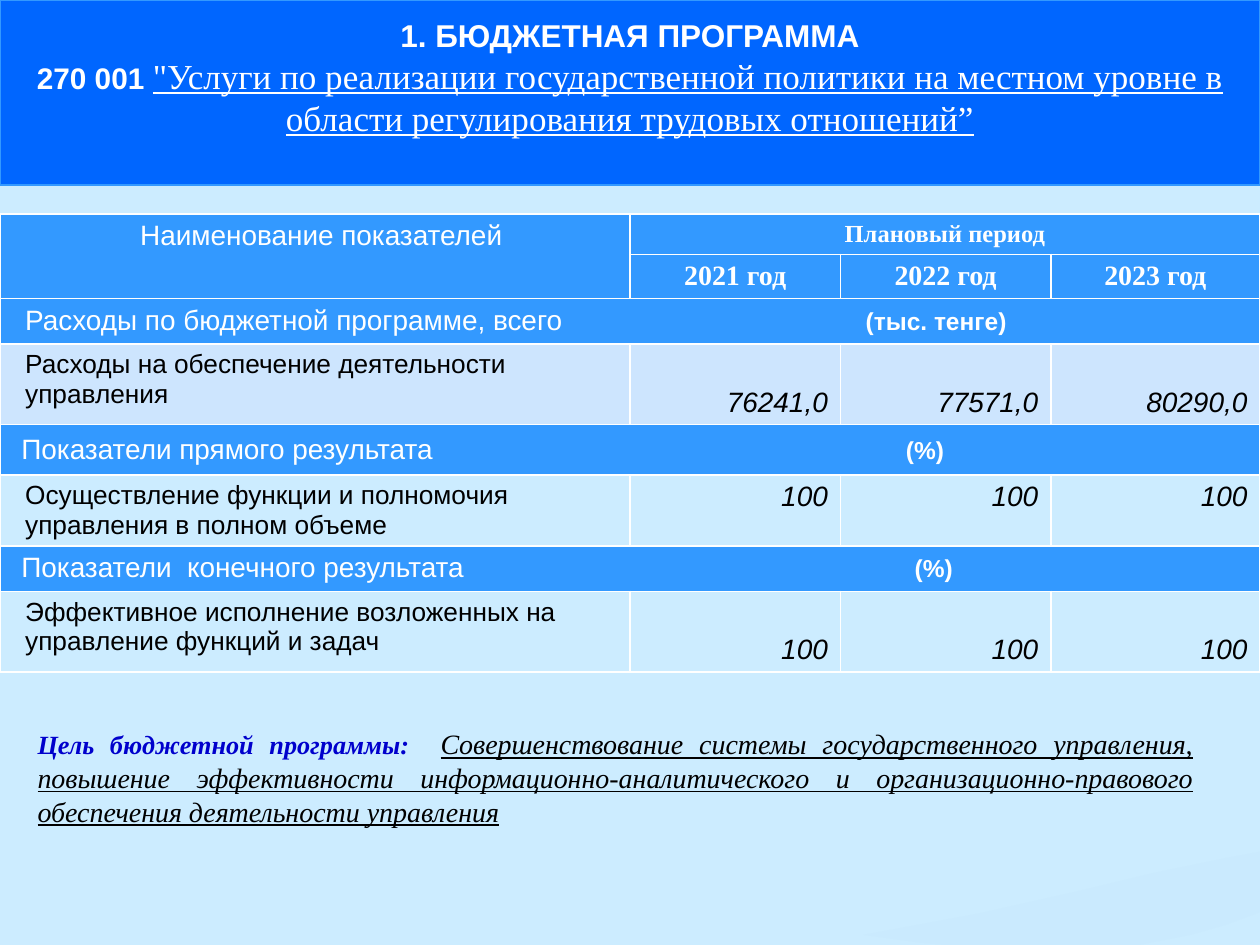
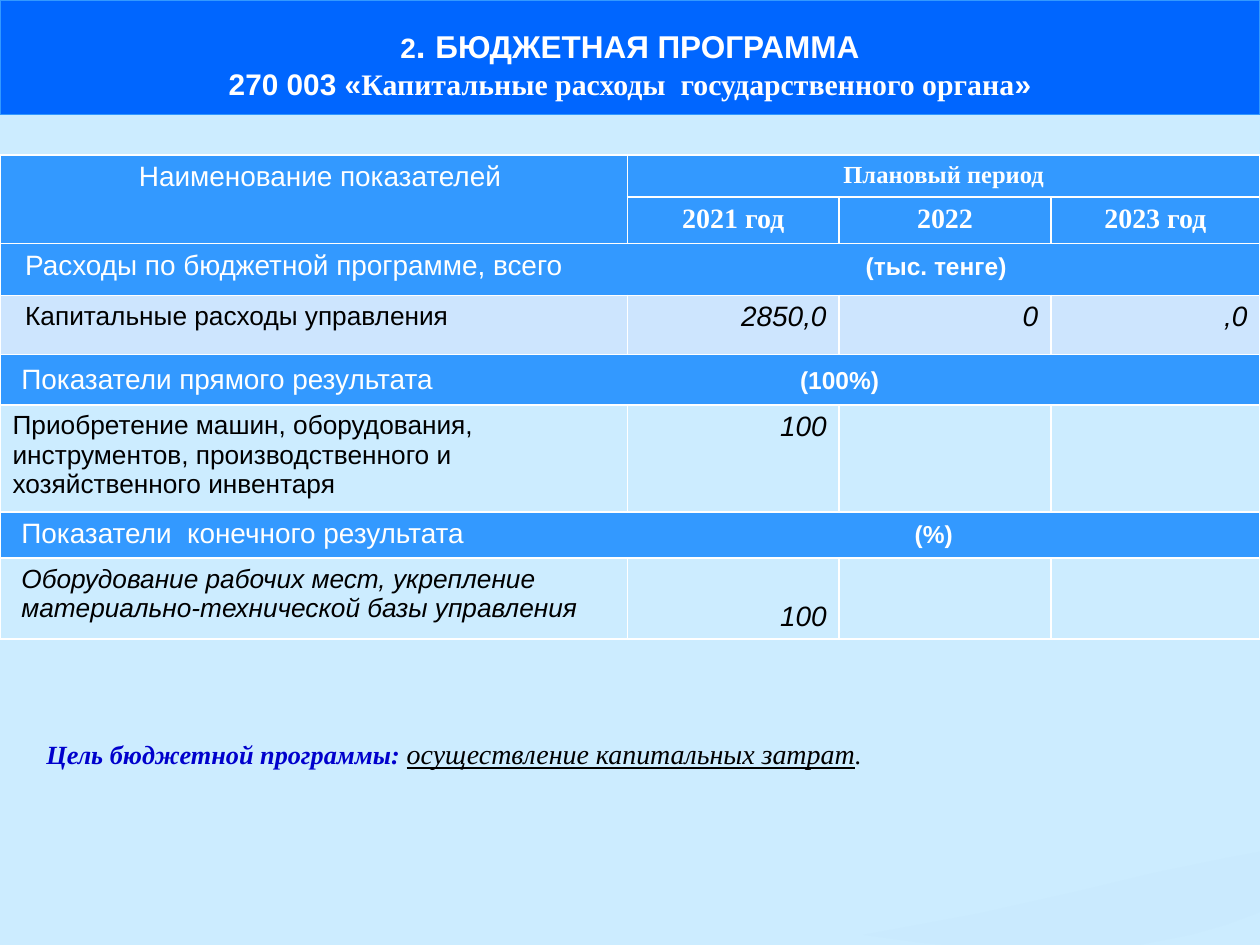
from pptx import Presentation
from pptx.util import Inches, Pt
from pptx.dml.color import RGBColor
from pptx.enum.shapes import MSO_SHAPE as Preset
from pptx.enum.text import MSO_ANCHOR as Anchor, PP_ALIGN as Align
from pptx.oxml.ns import qn
from lxml.etree import SubElement

COLORS = {"page": "CCECFF", "title": "0066FF", "band": "3399FF", "spending": "CDE5FE",
          "white": "FFFFFF", "black": "000000", "goal": "0000CC", "wave": "C6E7FC"}
SANS, SERIF = "Arial", "Times New Roman"
WAVE = [(10, 6.76), (9.73, 6.81), (9.15, 6.93), (8.57, 7.07), (7.77, 7.25), (7.07, 7.38),
        (6.85, 7.42), (7.29, 7.48), (7.5, 7.5), (9.04, 7.5), (9.45, 7.42), (9.73, 7.34),
        (10, 7.24)]


def rgb(name):
    return RGBColor.from_string(COLORS[name])


class BudgetDeck:
    """Holds the shared style and the slide being built."""

    def __init__(self):
        self.prs = Presentation()
        self.prs.slide_width, self.prs.slide_height = Inches(10), Inches(7.5)
        self.slide = None

    def new_slide(self):
        self.slide = self.prs.slides.add_slide(self.prs.slide_layouts[6])
        page = self.slide.background.fill
        page.solid()
        page.fore_color.rgb = rgb("page")

    def add_runs(self, paragraph, runs, align=Align.LEFT):
        """Each run is (text, size, font, colour, styles), styles being letters of 'biu'."""
        paragraph.alignment = align
        for text, size, font, color, styles in runs:
            run = paragraph.add_run()
            run.text = text
            run.font.size, run.font.name = Pt(size), font
            run.font.color.rgb = rgb(color)
            run.font.bold = "b" in styles
            run.font.italic = "i" in styles
            run.font.underline = "u" in styles

    def wave(self):
        points = [(Inches(x), Inches(y)) for x, y in WAVE]
        builder = self.slide.shapes.build_freeform(*points[0], scale=1.0)
        builder.add_line_segments(points[1:], close=True)
        wave = builder.convert_to_shape()
        wave.shadow.inherit = False
        wave.line.fill.background()
        wave.fill.solid()
        wave.fill.fore_color.rgb = rgb("wave")
        tint = wave._element.spPr.find(qn("a:solidFill"))[0]
        SubElement(tint, qn("a:alpha"), val="30000")

    def title(self, height, top_margin, lines):
        banner = self.slide.shapes.add_shape(Preset.RECTANGLE, 0, 0, Inches(10), Inches(height))
        banner.shadow.inherit = False
        banner.fill.solid()
        banner.fill.fore_color.rgb = rgb("title")
        banner.line.color.rgb = rgb("band")
        banner.line.width = Pt(0.75)
        frame = banner.text_frame
        frame.word_wrap = True
        frame.vertical_anchor = Anchor.TOP
        frame.margin_top = Inches(top_margin)
        for i, line in enumerate(lines):
            paragraph = frame.add_paragraph() if i else frame.paragraphs[0]
            runs = [(text, size, font, "white", styles) for text, size, font, styles in line]
            self.add_runs(paragraph, runs, Align.CENTER)

    def goal(self, left, top, height, runs):
        box = self.slide.shapes.add_textbox(Inches(left), Inches(top), Inches(9.37), Inches(height))
        box.text_frame.word_wrap = True
        self.add_runs(box.text_frame.paragraphs[0], runs, Align.JUSTIFY)

    def cell(self, cell, runs, fill=None, align=Align.LEFT, left=0.1, anchor=Anchor.TOP):
        if fill:
            cell.fill.solid()
            cell.fill.fore_color.rgb = rgb(fill)
        else:
            cell.fill.background()
        cell.margin_left = Inches(left)
        cell.vertical_anchor = anchor
        self.add_runs(cell.text_frame.paragraphs[0], runs, align)

    def borders(self, cell):
        props = cell._tc.get_or_add_tcPr()
        for side in ("a:lnL", "a:lnR", "a:lnT", "a:lnB"):
            edge = SubElement(props, qn(side), w=str(Pt(1)))
            SubElement(SubElement(edge, qn("a:solidFill")), qn("a:srgbClr"), val=COLORS["white"])

    def band(self, table, row, label, unit, unit_x, left, anchor):
        """Full-width section row; a tab stop places the unit."""
        head = table.cell(row, 0)
        head.merge(table.cell(row, 3))
        self.cell(head, [(label + "\t", 16, SANS, "white", ""), (unit, 14, SANS, "white", "b")],
                  "band", left=left, anchor=anchor)
        props = head.text_frame.paragraphs[0]._p.get_or_add_pPr()
        SubElement(SubElement(props, qn("a:tabLst")), qn("a:tab"),
                   pos=str(Inches(unit_x - left)), algn="l")

    def indicators(self, top, columns, heights, years, sections):
        frame = self.slide.shapes.add_table(len(heights), len(columns), 0, Inches(top),
                                            Inches(10), Inches(sum(heights)))
        table = frame.table
        table.first_row = table.horz_banding = False
        for column, width in zip(table.columns, columns):
            column.width = Inches(width)
        for row, height in zip(table.rows, heights):
            row.height = Inches(height)
        for cell in table.iter_cells():
            self.borders(cell)

        # Two-level header
        name, period = table.cell(0, 0), table.cell(0, 1)
        name.merge(table.cell(1, 0))
        period.merge(table.cell(0, 3))
        self.cell(name, [("Наименование показателей", 16, SANS, "white", "")],
                  "band", Align.CENTER, left=0.2)
        self.cell(period, [("Плановый период", 14, SERIF, "white", "b")], "band", Align.CENTER)
        for col, year in enumerate(years, 1):
            self.cell(table.cell(1, col), [(year, 16, SERIF, "white", "b")], "band", Align.CENTER)

        # A band and an indicator row per section
        bands = [("Расходы по бюджетной программе, всего", 0.2, Anchor.TOP, "spending"),
                 ("Показатели прямого результата", 0.17, Anchor.MIDDLE, None),
                 ("Показатели  конечного результата", 0.17, Anchor.TOP, None)]
        for i, ((label, band_left, band_anchor, fill), section) in enumerate(zip(bands, sections)):
            unit, unit_x, indicator, left, styles, values, anchor = section
            row = 2 + 2 * i
            self.band(table, row, label, unit, unit_x, band_left, band_anchor)
            self.cell(table.cell(row + 1, 0), [(indicator, 15, SANS, "black", styles)],
                      fill, left=left)
            for col, value in enumerate(values, 1):
                runs = [(value, 16, SANS, "black", "i")] if value else []
                self.cell(table.cell(row + 1, col), runs, fill, Align.RIGHT, anchor=anchor)


def main():
    deck = BudgetDeck()

    # Programme 001: labour relations
    deck.new_slide()
    deck.indicators(
        1.7, [5, 1.67, 1.67, 1.66], [0.32, 0.35, 0.36, 0.64, 0.4, 0.56, 0.36, 0.64],
        ["2021 год", "2022 год", "2023 год"],
        [("(тыс. тенге)", 6.87, "Расходы на обеспечение деятельности управления", 0.2, "",
          ["76241,0", "77571,0", "80290,0"], Anchor.BOTTOM),
         ("(%)", 7.19, "Осуществление функции и полномочия управления в полном объеме", 0.2, "",
          ["100"] * 3, Anchor.TOP),
         ("(%)", 7.26, "Эффективное исполнение возложенных на управление функций и задач", 0.2,
          "", ["100"] * 3, Anchor.BOTTOM)])
    deck.wave()
    deck.title(1.47, 0.13, [
        [("1. БЮДЖЕТНАЯ ПРОГРАММА", 18, SANS, "b")],
        [("270 001 ", 17, SANS, "b"),
         ("\"Услуги по реализации государственной политики на местном уровне в области "
          "регулирования трудовых отношений”", 20, SERIF, "u")]])
    deck.goal(0.2, 5.72, 0.91, [
        ("Цель бюджетной программы:  ", 15, SERIF, "goal", "bi"),
        ("Совершенствование системы государственного управления, повышение эффективности "
         "информационно-аналитического и организационно-правового обеспечения деятельности "
         "управления", 16, SERIF, "black", "iu")])

    # Programme 003: capital spending
    deck.new_slide()
    deck.indicators(
        1.23, [4.98, 1.68, 1.68, 1.66], [0.33, 0.37, 0.41, 0.47, 0.4, 0.85, 0.36, 0.64],
        ["2021 год", "2022", "2023 год"],
        [("(тыс. тенге)", 6.87, "Капитальные расходы управления", 0.2, "",
          ["2850,0", "0", ",0"], Anchor.TOP),
         ("(100%)", 6.35, "Приобретение машин, оборудования, инструментов, производственного и "
          "хозяйственного инвентаря", 0.1, "", ["100", "", ""], Anchor.TOP),
         ("(%)", 7.26, "Оборудование рабочих мест, укрепление материально-технической базы "
          "управления", 0.17, "i", ["100", "", ""], Anchor.BOTTOM)])
    deck.wave()
    deck.title(0.91, 0.19, [
        [("2", 16, SANS, "b"), (". ", 20, SANS, "b"), ("БЮДЖЕТНАЯ ПРОГРАММА", 18, SANS, "b")],
        [("270 003 «", 17, SANS, "b"),
         ("Капитальные расходы  государственного органа", 17, SERIF, "b"),
         ("»", 17, SANS, "b")]])
    deck.goal(0.27, 5.8, 0.4, [
        ("Цель бюджетной программы: ", 15, SERIF, "goal", "bi"),
        ("осуществление капитальных затрат", 16, SERIF, "black", "iu"),
        (".", 15, SERIF, "black", "i")])

    deck.prs.save("out.pptx")


if __name__ == "__main__":
    main()
